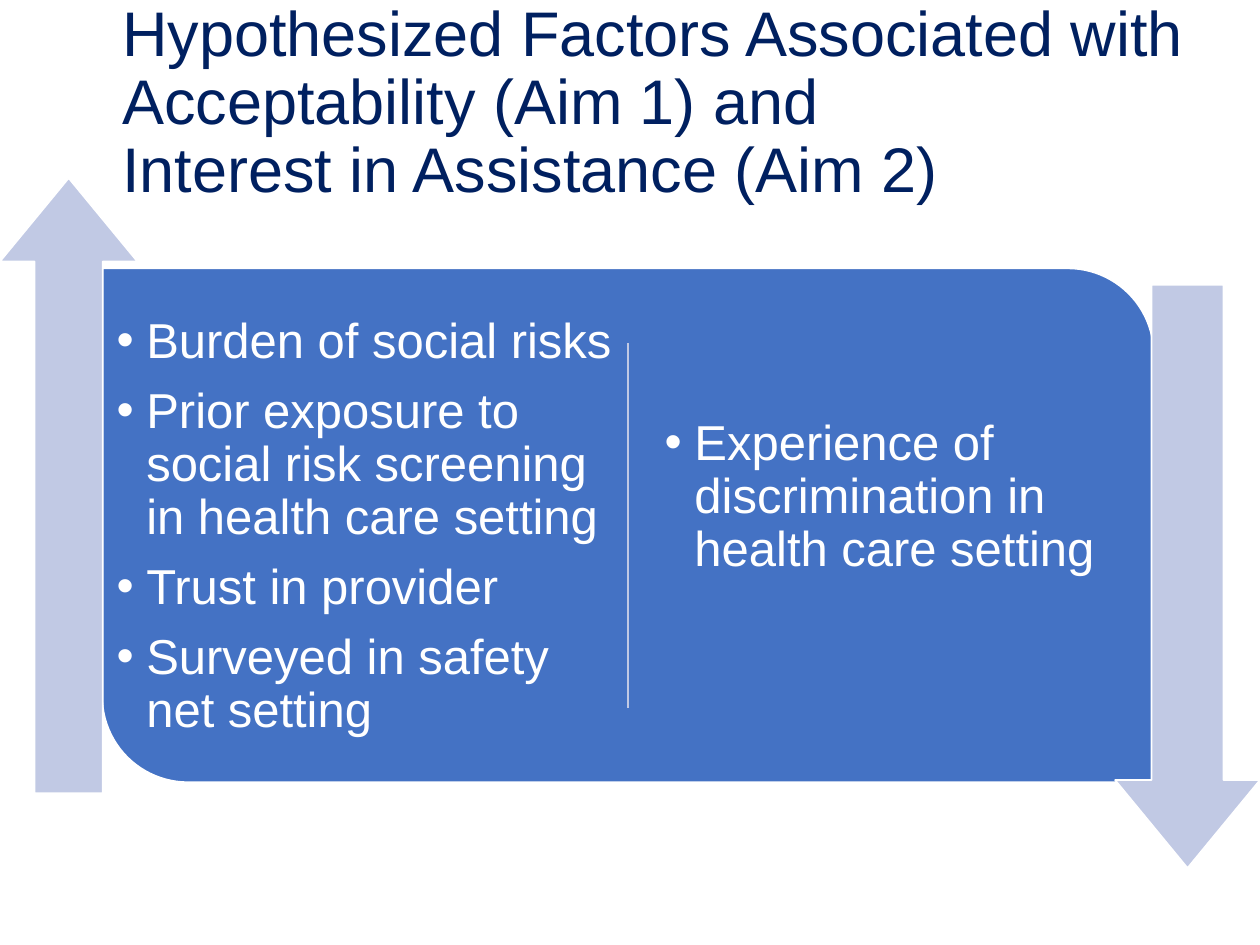
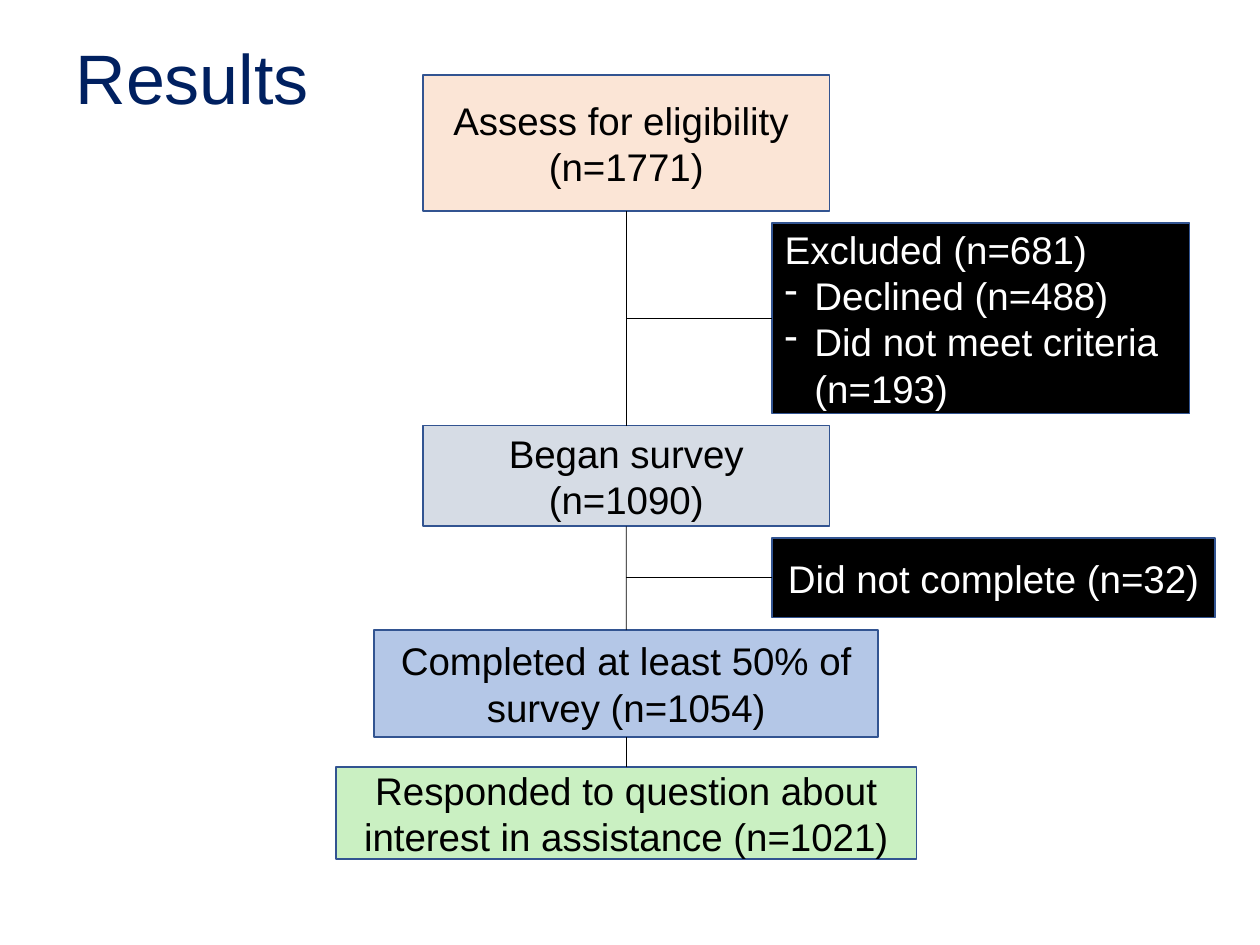
import dataclasses
import itertools

import lxml.etree
import pptx
import pptx.dml.color
import pptx.enum.shapes
import pptx.enum.text
import pptx.oxml.ns
import pptx.util

Cm = pptx.util.Cm
Pt = pptx.util.Pt
Shape = pptx.enum.shapes.MSO_SHAPE
Align = pptx.enum.text.PP_ALIGN
Anchor = pptx.enum.text.MSO_ANCHOR


@dataclasses.dataclass(frozen=True)
class Theme:
    font: str = "Arial"
    navy: str = "002060"
    panel: str = "4472C4"
    pale: str = "C1C9E4"
    outline: str = "325491"
    white: str = "FFFFFF"
    black: str = "000000"
    peach: str = "FBE5D6"
    grey: str = "D6DCE5"
    sky: str = "B4C7E7"
    green: str = "CAF0C2"
    long_title: int = 36
    title: int = 40
    factor: int = 28
    step: int = 22


@dataclasses.dataclass(frozen=True)
class Box:
    left: float
    top: float
    width: float
    height: float

    def inner(self, left, top, width, height):
        return Box(self.left + left, self.top + top, width, height)

    def lengths(self):
        return [Cm(n) for n in (self.left, self.top, self.width, self.height)]


THEME = Theme()


def rgb(value):
    return pptx.dml.color.RGBColor.from_string(value)


def add_span(para, text, size, color):
    span = para.add_run()
    span.text = text
    span.font.name = THEME.font
    span.font.size = Pt(size)
    span.font.color.rgb = rgb(color)


def add_bullet(para, mark, hang, margin):
    props = para._p.get_or_add_pPr()
    props.set("marL", str(Cm(margin)))
    props.set("indent", str(-Cm(hang)))
    bullet = lxml.etree.SubElement(props, pptx.oxml.ns.qn("a:buChar"))
    bullet.set("char", mark)


def next_para(frame, index):
    return frame.add_paragraph() if index else frame.paragraphs[0]


def place(shape, box):
    shape.left, shape.top, shape.width, shape.height = box.lengths()


def add_figure(page, kind, box, fill, line):
    shape = page.shapes.add_shape(kind, *box.lengths())
    shape.shadow.inherit = False
    shape.fill.solid()
    shape.fill.fore_color.rgb = rgb(fill)
    shape.line.color.rgb = rgb(line)
    shape.line.width = Pt(1)
    return shape


def add_line(page, start, end, color, width):
    line = page.shapes.add_connector(
        pptx.enum.shapes.MSO_CONNECTOR.STRAIGHT, *map(Cm, start + end))
    line.line.color.rgb = rgb(color)
    line.line.width = Pt(width)
    lxml.etree.SubElement(line.element.spPr, pptx.oxml.ns.qn("a:effectLst"))
    return line


def fill_title(page, box, lines, size):
    title = page.shapes.title
    place(title, box)
    frame = title.text_frame
    frame.auto_size = pptx.enum.text.MSO_AUTO_SIZE.NONE
    frame.vertical_anchor = Anchor.BOTTOM
    para = frame.paragraphs[0]
    para.alignment = Align.LEFT
    para.line_spacing = 0.9
    for index, text in enumerate(lines):
        if index:
            para.add_line_break()
        add_span(para, text, size, THEME.navy)


def fill_factors(holder, box, factors):
    place(holder, box)
    holder.element.getparent().append(holder.element)
    frame = holder.text_frame
    frame.auto_size = pptx.enum.text.MSO_AUTO_SIZE.NONE
    frame.vertical_anchor = Anchor.TOP
    frame.margin_left = frame.margin_right = Cm(0.3)
    frame.margin_top = frame.margin_bottom = Cm(0.3)
    for index, factor in enumerate(factors):
        para = next_para(frame, index)
        para.line_spacing = 0.9
        para.space_before = Pt(0)
        para.space_after = Pt(9.8)
        add_bullet(para, "•", 0.6, 0.64)
        add_span(para, factor, THEME.factor, THEME.white)


def add_factor_panel(page, box, raising, lowering):
    panel = add_figure(page, Shape.ROUND_2_DIAG_RECTANGLE, box,
                       THEME.panel, THEME.white)
    panel.adjustments[0] = 0
    panel.adjustments[1] = 0.167
    middle = box.left + box.width / 2
    add_line(page, (middle, box.top + 1.5),
             (middle, box.top + box.height - 1.5), THEME.pale, 1)
    left, right = list(page.placeholders)[1:3]
    fill_factors(left, box.inner(-0.05, 0.66, 10.92, 10.54), raising)
    fill_factors(right, box.inner(11, 2.72, 10.8, 7.92), lowering)
    for kind, arrow_box in (
            (Shape.UP_ARROW, box.inner(-2.06, -1.82, 2.77, 12.4)),
            (Shape.DOWN_ARROW, box.inner(20.42, 0.33, 2.92, 11.76))):
        arrow = add_figure(page, kind, arrow_box, THEME.pale, THEME.white)
        arrow.adjustments[0] = 0.498
        arrow.adjustments[1] = 0.607


def add_step(page, box, fill, lines, dashes=()):
    step = add_figure(page, Shape.RECTANGLE, box, fill, THEME.outline)
    frame = step.text_frame
    frame.word_wrap = True
    frame.vertical_anchor = Anchor.MIDDLE
    color = THEME.white if fill == THEME.black else THEME.black
    for index, text in enumerate([*lines, *dashes]):
        para = next_para(frame, index)
        para.alignment = Align.LEFT if dashes else Align.CENTER
        if index >= len(lines):
            add_bullet(para, "-", 0.6, 0.6)
        add_span(para, text, THEME.step, color)
    return step


def add_flow(page, box, stages, exits):
    axis = box.left + box.width / 2
    steps = []
    for top, width, height, fill, lines in stages:
        stage_box = Box(axis - width / 2, box.top + top, width, height)
        steps.append(add_step(page, stage_box, fill, lines))
    for upper, lower in itertools.pairwise(steps):
        link = add_line(page, (axis, 0), (axis, 1), THEME.black, 0.5)
        link.begin_connect(upper, 2)
        link.end_connect(lower, 0)
    for top, width, height, lines, dashes in exits:
        exit_box = box.inner(8.8, top, width, height)
        add_step(page, exit_box, THEME.black, lines, dashes)
        level = exit_box.top + height / 2
        add_line(page, (axis, level), (exit_box.left, level), THEME.black, 0.5)


def build_factors_page(deck):
    page = deck.slides.add_slide(deck.slide_layouts[3])
    fill_title(page, Box(2.21, 2.59, 22.7, 1.7),
               ["Hypothesized Factors Associated with Acceptability (Aim 1) and ",
                "Interest in Assistance (Aim 2)"], THEME.long_title)
    add_factor_panel(
        page, Box(2.06, 5.41, 21.2, 10.36),
        ["Burden of social risks",
         "Prior exposure to social risk screening in health care setting",
         "Trust in provider",
         "Surveyed in safety net setting"],
        ["Experience of discrimination in health care setting"])


def build_results_page(deck):
    page = deck.slides.add_slide(deck.slide_layouts[5])
    fill_title(page, Box(1.27, 0.84, 22.7, 1.7), ["Results"], THEME.title)
    stages = [
        (0, 8.2, 2.74, THEME.peach, ["Assess for eligibility ", "(n=1771)"]),
        (7.06, 8.2, 2.03, THEME.grey, ["Began survey (n=1090)"]),
        (11.18, 10.16, 2.16, THEME.sky,
         ["Completed at least 50% of survey (n=1054)"]),
        (13.95, 11.71, 1.85, THEME.green,
         ["Responded to question about interest in assistance (n=1021)"]),
    ]
    exits = [
        (2.98, 8.41, 3.84, ["Excluded (n=681)"],
         ["Declined (n=488)", "Did not meet criteria (n=193)"]),
        (9.33, 8.92, 1.6, ["Did not complete (n=32)"], []),
    ]
    add_flow(page, Box(6.77, 1.52, 11.71, 15.8), stages, exits)


def main():
    deck = pptx.Presentation()
    deck.slide_width = Cm(25.4)
    deck.slide_height = Cm(19.05)
    build_factors_page(deck)
    build_results_page(deck)
    deck.save("out.pptx")


if __name__ == "__main__":
    main()
